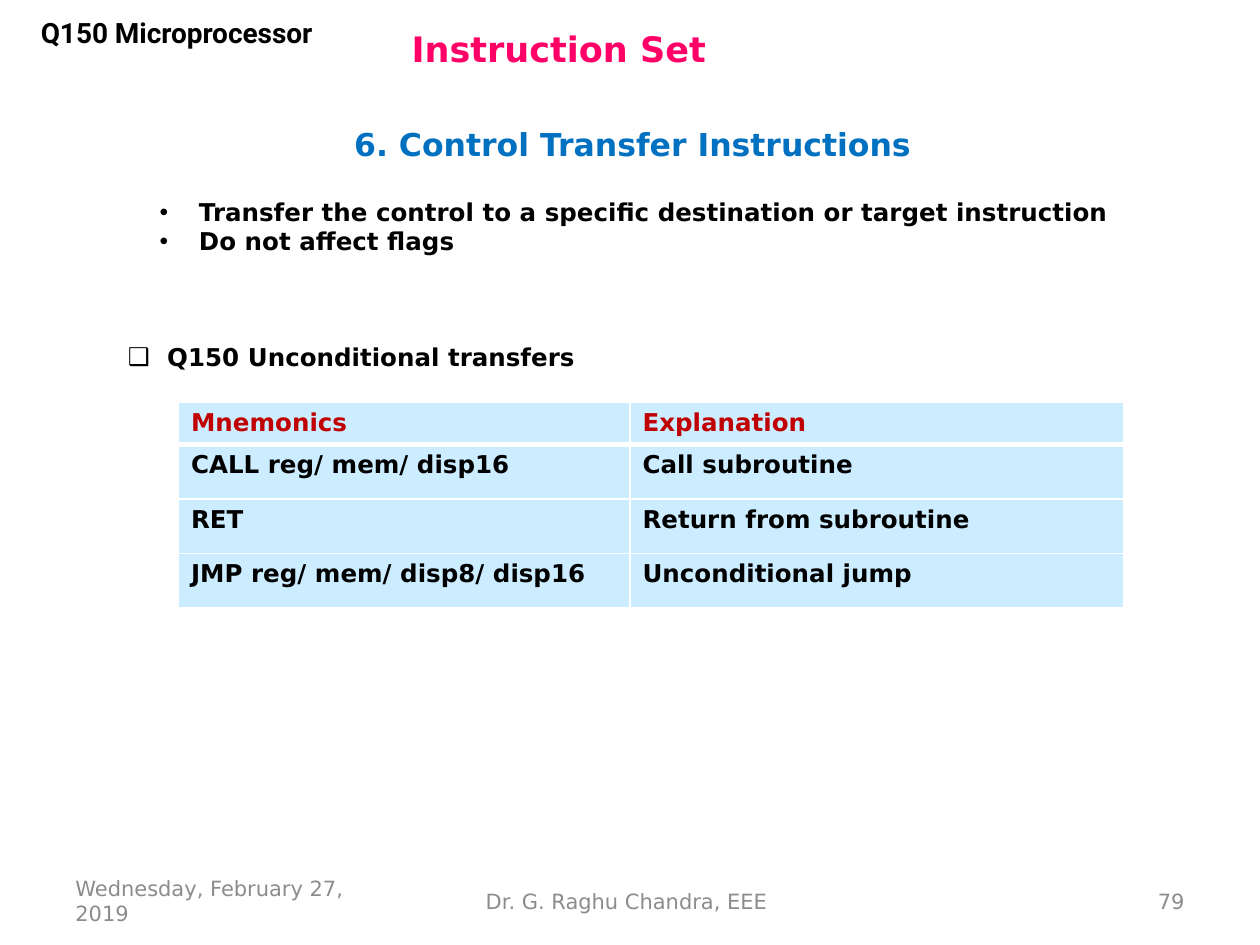
"""Build the control transfer instructions slide."""
import pptx
import pptx.dml.color
import pptx.enum.text
import pptx.oxml.ns
import pptx.util
from lxml import etree

Pt = pptx.util.Pt
Align = pptx.enum.text.PP_ALIGN
Anchor = pptx.enum.text.MSO_ANCHOR
AutoSize = pptx.enum.text.MSO_AUTO_SIZE
qn = pptx.oxml.ns.qn


def color(value):
    return pptx.dml.color.RGBColor.from_string(value)


def write(para, text, size=14, font="DejaVu Sans", ink="000000", bold=True, align=Align.LEFT):
    para.alignment = align
    span = para.add_run()
    span.text = text
    span.font.size = Pt(size)
    span.font.name = font
    span.font.bold = bold
    span.font.color.rgb = color(ink)


class SlideBuilder:
    bullet_indent = 22.5
    cell_fill = "CCECFF"
    border = "FFFFFF"

    def __init__(self, page):
        self.page = page

    def fill_box(self, box, place, lines, anchor=Anchor.TOP, wrap=True, bullet=None, **style):
        box.left, box.top, box.width, box.height = map(Pt, place)
        frame = box.text_frame
        frame.auto_size = AutoSize.NONE
        frame.word_wrap = wrap
        frame.vertical_anchor = anchor
        for index, line in enumerate(lines):
            para = frame.add_paragraph() if index else frame.paragraphs[0]
            para.space_before = Pt(0)
            write(para, line, **style)
            if bullet:
                self.add_bullet(para, bullet)

    def add_bullet(self, para, symbol):
        indent = Pt(self.bullet_indent)
        properties = para._p.get_or_add_pPr()
        properties.set("marL", str(indent))
        properties.set("indent", str(-indent))
        etree.SubElement(properties, qn("a:buFont")).set("typeface", "Arial")
        etree.SubElement(properties, qn("a:buChar")).set("char", symbol)

    def title(self, text, place, **style):
        self.fill_box(self.page.shapes.title, place, [text], Anchor.MIDDLE, **style)

    def body(self, lines, place, **style):
        self.fill_box(self.page.placeholders[1], place, lines, **style)

    def text(self, text, place, **style):
        box = self.page.shapes.add_textbox(*map(Pt, place))
        self.fill_box(box, place, [text], **style)

    def set_borders(self, cell, widths):
        properties = cell._tc.get_or_add_tcPr()
        for side, width in zip("LRTB", widths):
            line = etree.SubElement(properties, qn(f"a:ln{side}"), w=str(Pt(width)))
            fill = etree.SubElement(line, qn("a:solidFill"))
            etree.SubElement(fill, qn("a:srgbClr")).set("val", self.border)

    def table(self, rows, place, widths, heights):
        grid = self.page.shapes.add_table(len(rows), len(widths), *map(Pt, place)).table
        for column, width in zip(grid.columns, widths):
            column.width = Pt(width)
        for row, height in zip(grid.rows, heights):
            row.height = Pt(height)
        for row_index, row in enumerate(rows):
            ink = "000000" if row_index else "C00000"
            edges = (1, 1, 3 if row_index == 1 else 1, 1 if row_index else 3)
            for column_index, text in enumerate(row):
                cell = grid.cell(row_index, column_index)
                write(cell.text_frame.paragraphs[0], text, ink=ink)
                self.set_borders(cell, edges)
                cell.fill.solid()
                cell.fill.fore_color.rgb = color(self.cell_fill)


def main():
    deck = pptx.Presentation()
    deck.slide_width, deck.slide_height = Pt(720), Pt(540)
    slide = SlideBuilder(deck.slides.add_slide(deck.slide_layouts[1]))

    slide.text("6. Control Transfer Instructions", (21, 67, 681, 31), size=18,
               ink="0070C0", align=Align.CENTER, anchor=Anchor.MIDDLE)
    slide.title("Instruction Set", (228, 8.5, 474, 38), size=20, ink="FF0066")
    slide.text("Q150 Microprocessor", (5, 5.4, 192, 46), size=16, font="Roboto",
               align=Align.CENTER)
    slide.body(["Transfer the control to a specific destination or target instruction",
                "Do not affect flags"], (84, 109, 564, 41), bullet="•")
    slide.table([("Mnemonics", "Explanation"),
                 ("CALL reg/ mem/ disp16", "Call subroutine"),
                 ("RET", "Return from subroutine"),
                 ("JMP reg/ mem/ disp8/ disp16", "Unconditional jump")],
                (102, 230, 540, 117.6), (258, 282), (24, 31.2, 31.2, 31.2))
    slide.text("Q150 Unconditional transfers", (66, 192, 269, 24), wrap=False, bullet="❑")

    footers = [("Wednesday, February 27, 2019", 36, 168, Align.LEFT),
               ("Dr. G. Raghu Chandra, EEE", 244, 228, Align.CENTER),
               ("79", 516, 168, Align.RIGHT)]
    for text, left, width, align in footers:
        slide.text(text, (left, 500.5, width, 28.75), size=12, ink="8C8C8C",
                   bold=False, align=align, anchor=Anchor.MIDDLE)
    deck.save("out.pptx")


if __name__ == "__main__":
    main()
